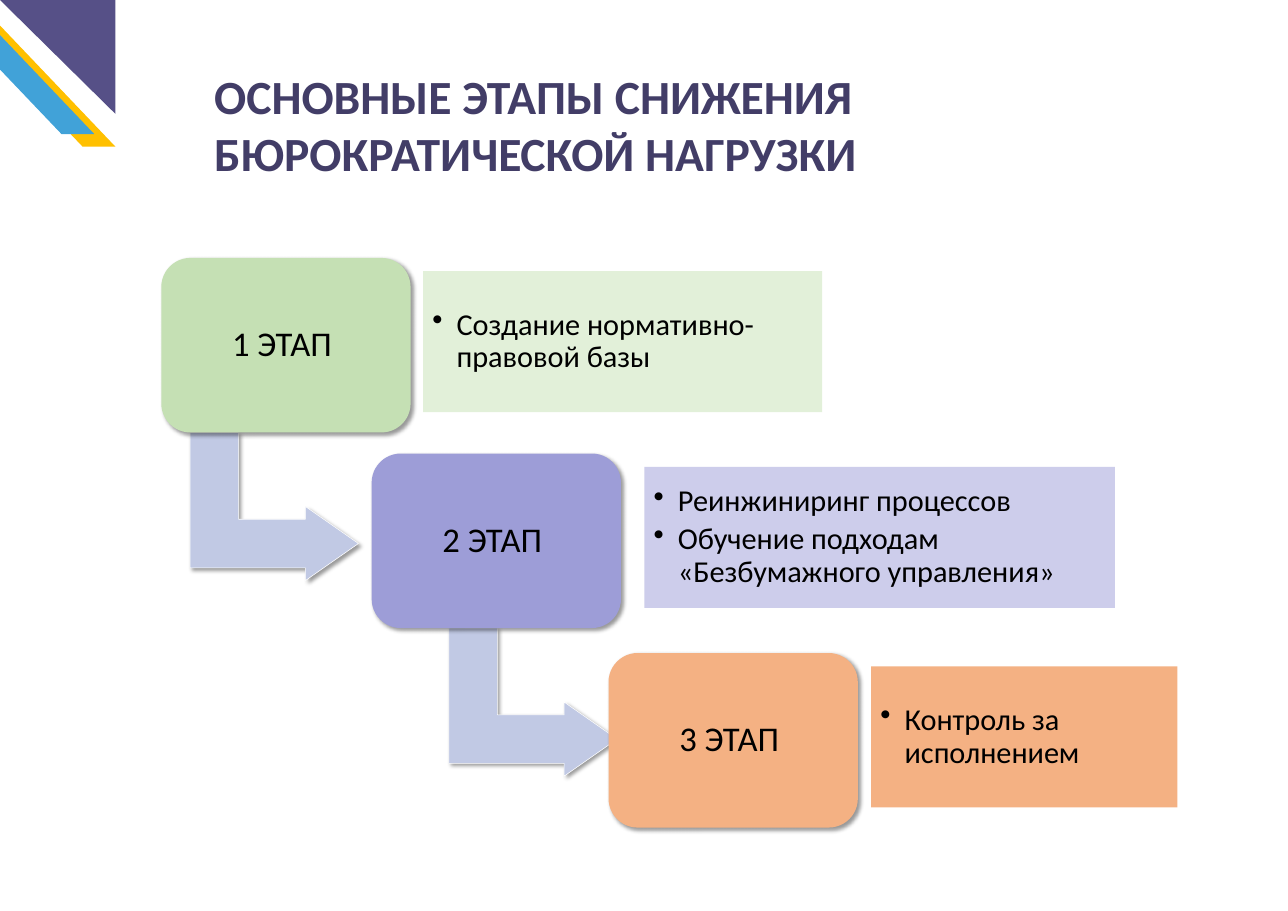
from dataclasses import dataclass

from lxml.etree import SubElement
from pptx import Presentation
from pptx.dml.color import RGBColor
from pptx.enum.shapes import MSO_SHAPE
from pptx.enum.text import MSO_ANCHOR, PP_ALIGN
from pptx.oxml.ns import qn
from pptx.util import Inches, Pt


@dataclass(frozen=True)
class Theme:
    font: str = "Calibri"
    title_size: int = 44
    stage_size: int = 32
    detail_size: int = 28
    title: str = "423D67"
    text: str = "000000"
    white: str = "FFFFFF"
    shadow: str = "000000"
    arrow: str = "C1C9E4"
    yellow: str = "FFC000"
    blue: str = "41A2D8"
    purple: str = "565087"
    green: str = "C5E0B4"
    pale_green: str = "E2F0D9"
    violet: str = "9D9DD7"
    pale_violet: str = "CDCDEB"
    orange: str = "F4B183"


class SlideBuilder:
    def __init__(self, page, theme):
        self.page = page
        self.theme = theme

    def shape(self, kind, frame, fill, adjustments=(), shadow=False):
        box = self.page.shapes.add_shape(kind, *map(Inches, frame))
        for index, value in enumerate(adjustments):
            box.adjustments[index] = value
        box.fill.solid()
        box.fill.fore_color.rgb = RGBColor.from_string(fill)
        box.line.fill.background()
        box.shadow.inherit = False
        if shadow:
            self.drop_shadow(box)
        return box

    def drop_shadow(self, box):
        effects = box._element.spPr.find(qn("a:effectLst"))
        outer = SubElement(effects, qn("a:outerShdw"), blurRad=str(Pt(4)),
                           dist=str(Pt(3)), dir="2700000", rotWithShape="0")
        color = SubElement(outer, qn("a:srgbClr"), val=self.theme.shadow)
        SubElement(color, qn("a:alpha"), val="40000")

    def span(self, para, text, size, color, bold=False):
        span = para.add_run()
        span.text = text
        span.font.name = self.theme.font
        span.font.size = Pt(size)
        span.font.bold = bold
        span.font.color.rgb = RGBColor.from_string(color)

    def text_area(self, box, inset):
        frame = box.text_frame
        frame.word_wrap = True
        frame.vertical_anchor = MSO_ANCHOR.MIDDLE
        frame.margin_left = frame.margin_right = Inches(inset)
        frame.margin_top = frame.margin_bottom = Inches(inset)
        return frame

    def stripe(self, left, top, color):
        box = self.shape(MSO_SHAPE.PARALLELOGRAM, (left, top, 2.27, 1.94), color, [0.953])
        box._element.spPr.find(qn("a:xfrm")).set("flipH", "1")

    def corner(self, size, color):
        box = self.shape(MSO_SHAPE.RIGHT_TRIANGLE, (0, 0, *size), color)
        box.rotation = 180

    def title(self, text, frame):
        box = self.page.shapes.add_textbox(*map(Inches, frame))
        box.text_frame.word_wrap = True
        self.span(box.text_frame.paragraphs[0], text,
                  self.theme.title_size, self.theme.title, bold=True)

    def arrow(self, left, top):
        box = self.shape(MSO_SHAPE.BENT_UP_ARROW, (left, top, 1.9, 2.16),
                         self.theme.arrow, [0.328, 0.25, 0.358], shadow=True)
        box.rotation = 90
        box.line.color.rgb = RGBColor.from_string(self.theme.white)
        box.line.width = Pt(0.5)

    def stage(self, label, left, top, color):
        box = self.shape(MSO_SHAPE.ROUNDED_RECTANGLE, (left, top, 3.2, 2.24),
                         color, [0.167], shadow=True)
        para = self.text_area(box, 0.13).paragraphs[0]
        para.alignment = PP_ALIGN.CENTER
        para.line_spacing = 0.9
        self.span(para, label, self.theme.stage_size, self.theme.text)

    def details(self, items, left, top, width, color):
        box = self.shape(MSO_SHAPE.RECTANGLE, (left, top, width, 1.81), color)
        frame = self.text_area(box, 0.12)
        for index, item in enumerate(items):
            para = frame.add_paragraph() if index else frame.paragraphs[0]
            para.alignment = PP_ALIGN.LEFT
            para.line_spacing = 0.9
            if index:
                para.space_before = Pt(5)
            properties = para._p.get_or_add_pPr()
            properties.set("marL", str(Inches(0.31)))
            properties.set("indent", str(-Inches(0.31)))
            SubElement(properties, qn("a:buChar"), char="•")
            self.span(para, item, self.theme.detail_size, self.theme.text)


def main():
    deck = Presentation()
    deck.slide_width, deck.slide_height = Inches(16.53), Inches(11.69)
    theme = Theme()
    builder = SlideBuilder(deck.slides.add_slide(deck.slide_layouts[6]), theme)

    # Corner decoration
    builder.stripe(-0.79, -0.06, theme.yellow)
    builder.stripe(-1.06, -0.22, theme.blue)
    builder.corner((1.48, 1.46), theme.purple)

    # Title
    builder.title("ОСНОВНЫЕ ЭТАПЫ СНИЖЕНИЯ БЮРОКРАТИЧЕСКОЙ НАГРУЗКИ",
                  (2.65, 0.81, 11.75, 1.58))

    # Stages: left, top, colour, arrow left, then detail left, width, colour, items
    stages = [
        (2.07, 3.31, theme.green, 2.57, 5.43, 5.12, theme.pale_green,
         ["Создание нормативно-правовой базы"]),
        (4.77, 5.82, theme.violet, 5.89, 8.27, 6.04, theme.pale_violet,
         ["Реинжиниринг процессов", "Обучение подходам «Безбумажного управления»"]),
        (7.81, 8.38, theme.orange, None, 11.18, 3.93, theme.orange,
         ["Контроль за исполнением"]),
    ]
    for number, stage in enumerate(stages, 1):
        left, top, color, arrow_left, detail_left, width, detail_color, items = stage
        if arrow_left is not None:
            builder.arrow(arrow_left, top + 2.11)
        builder.stage(f"{number} ЭТАП ", left, top, color)
        builder.details(items, detail_left, top + 0.17, width, detail_color)

    deck.save("out.pptx")


if __name__ == "__main__":
    main()
